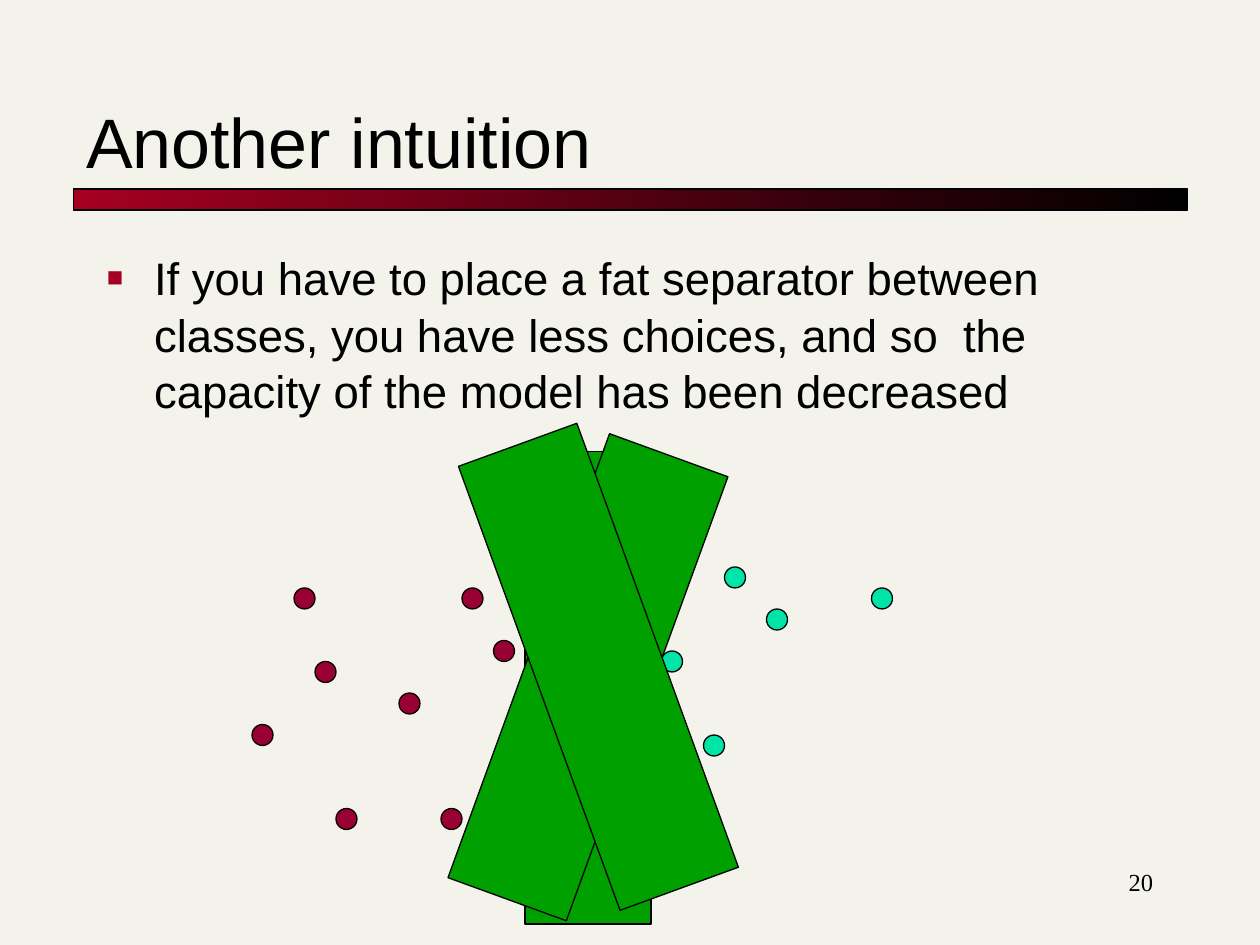
from lxml import etree
from pptx import Presentation
from pptx.dml.color import RGBColor
from pptx.enum.shapes import MSO_SHAPE
from pptx.enum.text import MSO_ANCHOR, PP_ALIGN
from pptx.oxml.ns import qn
from pptx.util import Emu, Pt

RECT, OVAL = MSO_SHAPE.RECTANGLE, MSO_SHAPE.OVAL
BOTTOM = MSO_ANCHOR.BOTTOM
LEFT, RIGHT = PP_ALIGN.LEFT, PP_ALIGN.RIGHT
TITLE_ONLY = 5
EMU_PER_PX = 9525
DOT = 16

INK, PAPER, CRIMSON = "000000", "F4F3EB", "A50021"
MAROON, MINT, GREEN = "990033", "00E4A8", "00A000"

LEFT_CLASS = [(224, 448), (240, 504), (256, 616), (352, 448),
              (192, 552), (304, 528), (376, 488), (336, 616)]
RIGHT_CLASS = [(504, 496), (536, 560), (552, 432), (664, 448), (584, 464)]
SEPARATORS = [(400, 344, 0), (400, 336, 20), (408, 328, 340)]


def px(n):
    """Turn px into EMU."""
    return Emu(n * EMU_PER_PX)


def rgb(value):
    """Turn a hex string into a colour."""
    return RGBColor.from_string(value)


def add_run(p, text, size, font="Arial"):
    """Add one formatted run to a paragraph."""
    r = p.add_run()
    r.text = text
    r.font.size = Pt(size)
    r.font.name = font
    r.font.color.rgb = rgb(INK)


def add_figure(s, kind, x, y, w, h, fill=None, rotation=0):
    """Add an outlined preset shape, filled when a colour is given."""
    sp = s.shapes.add_shape(kind, px(x), px(y), px(w), px(h))
    sp.shadow.inherit = False
    sp.rotation = rotation
    sp.line.color.rgb = rgb(INK)
    sp.line.width = Pt(0.75)
    if fill:
        sp.fill.solid()
        sp.fill.fore_color.rgb = rgb(fill)
    return sp


def add_bar(s):
    """Add the gradient bar below the title."""
    sp = add_figure(s, RECT, 56, 144, 849, 16)
    sp.fill.gradient()
    sp.fill.gradient_angle = 0
    for stop, color in zip(sp.fill.gradient_stops, (CRIMSON, INK)):
        stop.color.rgb = rgb(color)


def add_text(s, x, y, w, h):
    """Add a wrapping text box and return its first paragraph."""
    tf = s.shapes.add_textbox(px(x), px(y), px(w), px(h)).text_frame
    tf.word_wrap = True
    return tf.paragraphs[0]


def set_title(s, text):
    """Place and fill the title placeholder."""
    sp = s.shapes.title
    sp.left, sp.top, sp.width, sp.height = px(56), px(40), px(848), px(104)
    tf = sp.text_frame
    tf.vertical_anchor = BOTTOM
    p = tf.paragraphs[0]
    p.alignment = LEFT
    add_run(p, text, 40)


def set_bullet(p, indent):
    """Give a paragraph a square bullet and a hanging indent."""
    pPr = p._p.get_or_add_pPr()
    pPr.set("marL", str(px(indent)))
    pPr.set("indent", str(px(-indent)))
    color = etree.SubElement(pPr, qn("a:buClr"))
    etree.SubElement(color, qn("a:srgbClr"), val=CRIMSON)
    etree.SubElement(pPr, qn("a:buSzPct"), val="60000")
    etree.SubElement(pPr, qn("a:buFont"), typeface="Arial")
    etree.SubElement(pPr, qn("a:buChar"), char="■")


def add_dots(s, points, color):
    """Add the data points of one class."""
    for x, y in points:
        add_figure(s, OVAL, x, y, DOT, DOT, color)


def main():
    """Build the slide."""
    prs = Presentation()
    prs.slide_width, prs.slide_height = px(960), px(720)
    s = prs.slides.add_slide(prs.slide_layouts[TITLE_ONLY])
    s.background.fill.solid()
    s.background.fill.fore_color.rgb = rgb(PAPER)

    add_bar(s)
    set_title(s, "Another intuition")

    p = add_text(s, 688, 656, 200, 48)
    p.alignment = RIGHT
    add_run(p, "20", 14, "Times New Roman")

    p = add_text(s, 72, 184, 816, 512)
    p.line_spacing = 1.04
    set_bullet(p, 36)
    add_run(p, "If you have to place a fat separator between classes, you have "
               "less choices, and so  the capacity of the model has been "
               "decreased", 26)

    add_dots(s, LEFT_CLASS, MAROON)
    add_dots(s, RIGHT_CLASS, MINT)
    for x, y, rotation in SEPARATORS:
        add_figure(s, RECT, x, y, 96, 360, GREEN, rotation)

    prs.save("out.pptx")


if __name__ == "__main__":
    main()
